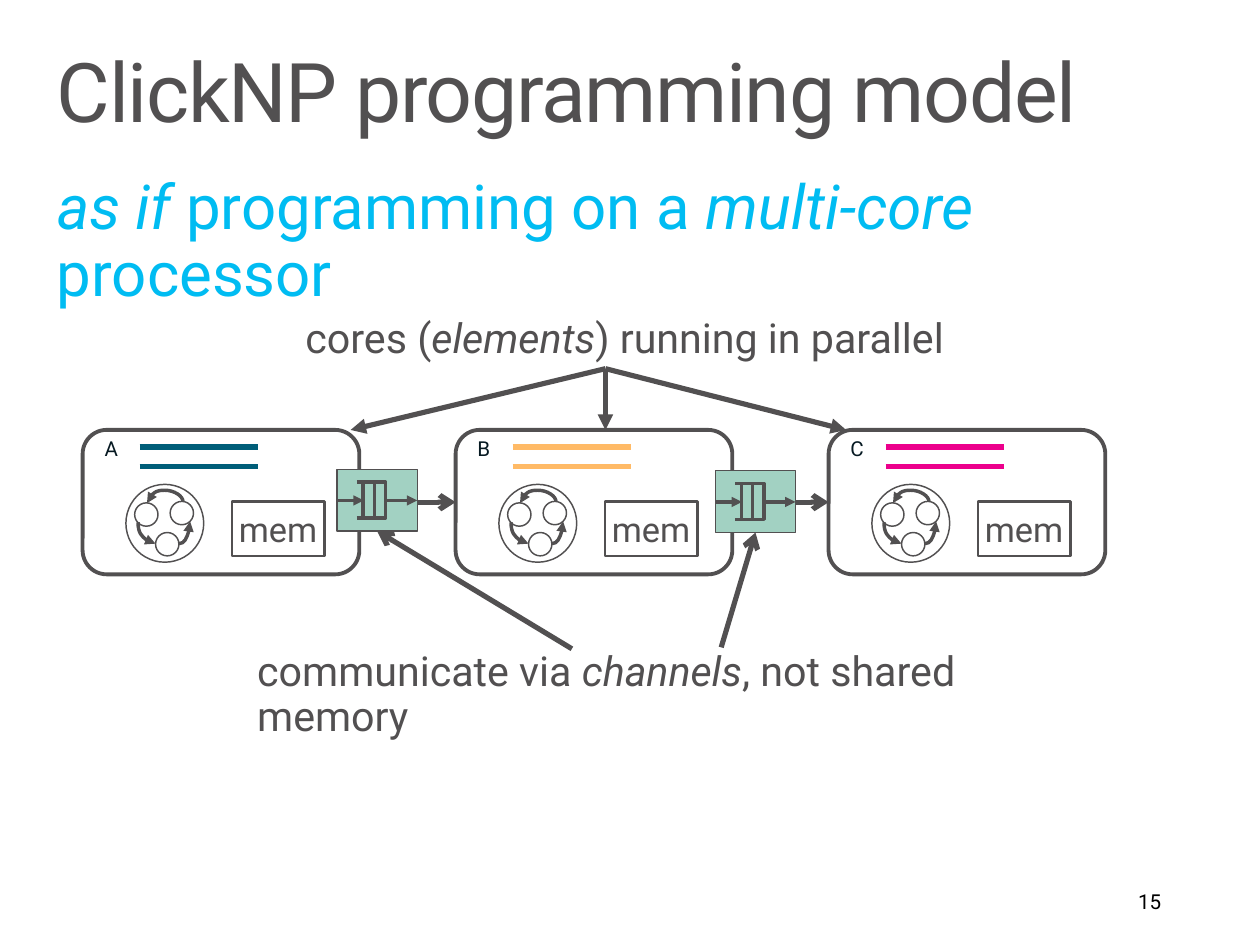
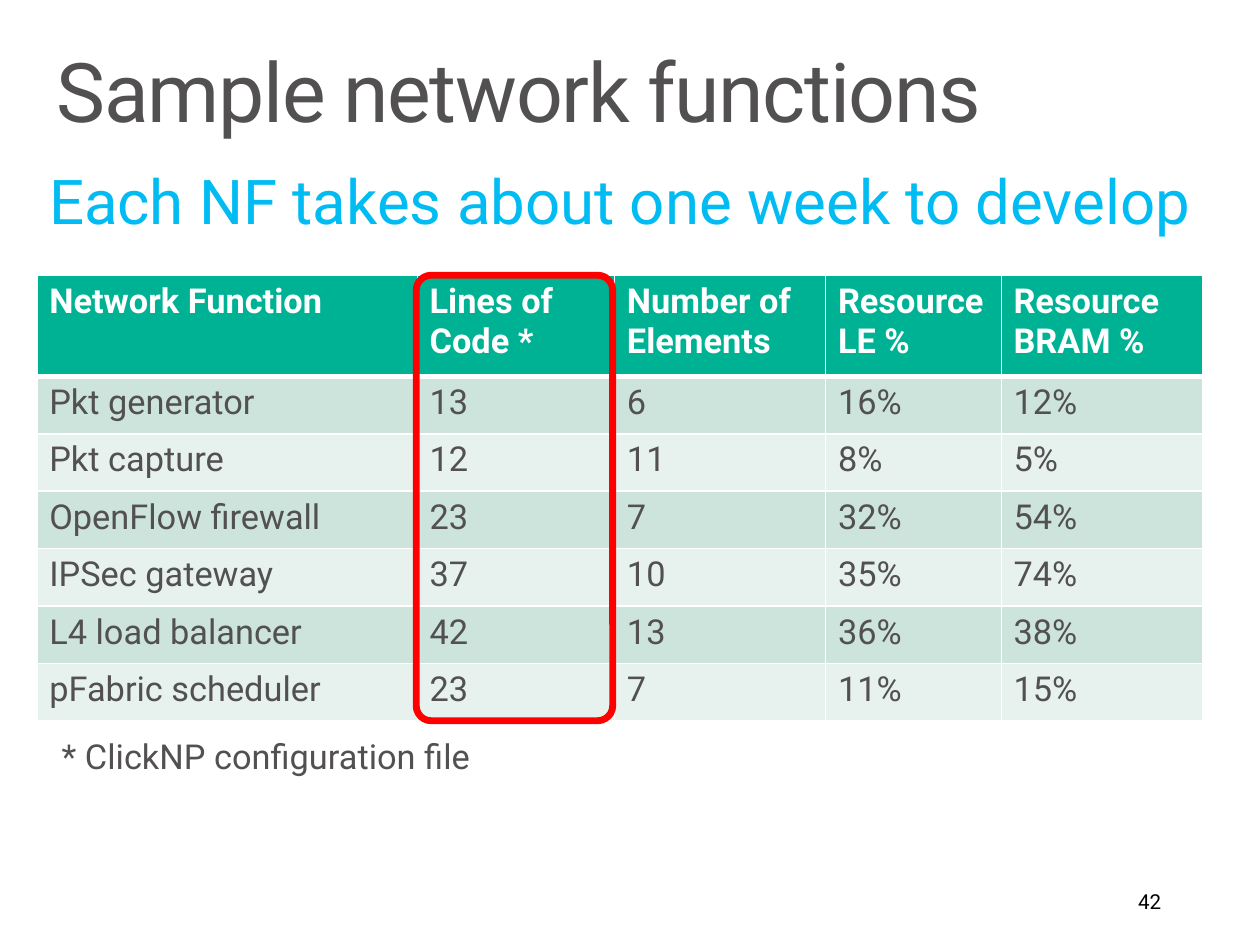
import dataclasses

import lxml.etree
import pptx
import pptx.dml.color
import pptx.enum.shapes
import pptx.enum.text
import pptx.oxml.ns
import pptx.util

Cm = pptx.util.Cm
Pt = pptx.util.Pt
qn = pptx.oxml.ns.qn
SHAPE = pptx.enum.shapes.MSO_SHAPE
CONNECTOR = pptx.enum.shapes.MSO_CONNECTOR
ALIGN = pptx.enum.text.PP_ALIGN
ANCHOR = pptx.enum.text.MSO_ANCHOR


@dataclasses.dataclass(frozen=True)
class Theme:
    font: str = "Roboto"
    gray: str = "525051"
    blue: str = "00BCF2"
    black: str = "000000"
    white: str = "FFFFFF"
    label: str = "061922"
    channel: str = "A2D1C2"
    header: str = "00B294"
    bands: tuple = ("CCE4DC", "E7F2EE")
    highlight: str = "FF0000"
    cores: tuple = (("A", "005E79"), ("B", "FFBA66"), ("C", "EC008C"))
    title_size: int = 48
    subtitle_size: int = 36
    caption_size: int = 24
    body_size: int = 20
    small_size: int = 12


THEME = Theme()
WIDE_INSET = (0.51, 0.41)
HEADING_INSET = (0.41, 0.25)
NARROW_INSET = (0.25, 0.13)

# Core geometry, in cm
CORE_LEFT, CORE_TOP, CORE_PITCH = 1.7, 8.84, 7.67
CORE_WIDTH, CORE_HEIGHT = 5.69, 2.97


def color(value):
    return pptx.dml.color.RGBColor.from_string(value)


def style_paragraph(paragraph, size, text_color, bold=None):
    font = paragraph.font
    font.name, font.size, font.bold = THEME.font, Pt(size), bold
    font.color.rgb = color(text_color)


def set_inset(frame, inset):
    frame.margin_left = frame.margin_right = Cm(inset[0])
    frame.margin_top = frame.margin_bottom = Cm(inset[1])


def add_text(slide, box, text, size, text_color=THEME.gray, inset=NARROW_INSET,
             spacing=None, after=None):
    """Add a wrapped text box; words between underscores are italic."""
    shape = slide.shapes.add_textbox(*map(Cm, box))
    frame = shape.text_frame
    frame.word_wrap = True
    set_inset(frame, inset)
    paragraph = frame.paragraphs[0]
    style_paragraph(paragraph, size, text_color)
    paragraph.line_spacing = spacing
    if after:
        paragraph.space_after = Pt(after)
    for index, part in enumerate(text.split("_")):
        if part:
            run = paragraph.add_run()
            run.text = part
            if index % 2:
                run.font.italic = True
    return shape


def add_caption(slide, box, text, size=THEME.caption_size):
    add_text(slide, box, text, size, inset=WIDE_INSET, spacing=0.9, after=6)


def add_outline(shapes, kind, box, width, fill=None, line=THEME.gray, corner=None):
    shape = shapes.add_shape(kind, *map(Cm, box))
    shape.shadow.inherit = False
    if fill:
        shape.fill.solid()
        shape.fill.fore_color.rgb = color(fill)
    else:
        shape.fill.background()
    shape.line.color.rgb = color(line)
    shape.line.width = Pt(width)
    if corner is not None:
        shape.adjustments[0] = corner
    return shape


def add_line(shapes, start, end, width, line=THEME.gray, head=None, tail=None,
             kind=CONNECTOR.STRAIGHT):
    connector = shapes.add_connector(kind, *map(Cm, (*start, *end)))
    connector.line.color.rgb = color(line)
    connector.line.width = Pt(width)
    properties = connector._element.spPr
    outline = properties.find(qn("a:ln"))
    for tag, arrow in (("a:headEnd", head), ("a:tailEnd", tail)):
        if arrow:
            lxml.etree.SubElement(outline, qn(tag)).set("type", arrow)
    lxml.etree.SubElement(properties, qn("a:effectLst"))
    return connector


def add_curve(shapes, start, end, preset="curvedConnector2", rotation=0, bend=None,
              **arrows):
    connector = add_line(shapes, start, end, 2, kind=CONNECTOR.CURVE, **arrows)
    properties = connector._element.spPr
    geometry = properties.find(qn("a:prstGeom"))
    geometry.set("prst", preset)
    if rotation:
        properties.find(qn("a:xfrm")).set("rot", str(rotation * 60000))
    if bend is not None:
        values = geometry.find(qn("a:avLst"))
        if values is None:
            values = lxml.etree.SubElement(geometry, qn("a:avLst"))
        guide = lxml.etree.SubElement(values, qn("a:gd"))
        guide.set("name", "adj1")
        guide.set("fmla", f"val {round(bend * 100000)}")


def add_base_slide(presentation, title, subtitle, subtitle_inset, number):
    slide = presentation.slides.add_slide(presentation.slide_layouts[6])
    heading = add_text(slide, (0.76, 0.81, 24.4, 2.54), title, THEME.title_size,
                       inset=HEADING_INSET, spacing=0.9)
    for run in heading.text_frame.paragraphs[0].runs:
        run._r.get_or_add_rPr().set("spc", "-80")
    add_text(slide, (0.76, 3.38, 24.4, 3.28), subtitle, THEME.subtitle_size,
             THEME.blue, subtitle_inset, 0.9)
    footer = add_text(slide, (18.29, 18.01, 5.84, 1.04), number, THEME.small_size,
                      THEME.black)
    footer.text_frame.vertical_anchor = ANCHOR.MIDDLE
    footer.text_frame.paragraphs[0].alignment = ALIGN.RIGHT
    return slide


def add_state_machine(slide, x):
    shapes = slide.shapes.add_group_shape().shapes
    add_outline(shapes, SHAPE.OVAL, (x + 0.89, 9.96, 1.6, 1.6), 0.85)
    for left, top in ((1.5, 10.95), (1.07, 10.34), (1.8, 10.31)):
        add_outline(shapes, SHAPE.OVAL, (x + left, top, 0.48, 0.48), 0.85, THEME.white)
    add_curve(shapes, (x + 1.98, 11.18), (x + 2.21, 10.72), tail="triangle")
    add_curve(shapes, (x + 1.5, 11.18), (x + 1.14, 10.74), head="triangle")
    add_curve(shapes, (x + 1.71, 10.7), (x + 1.68, 9.96), "curvedConnector3",
              rotation=270, bend=-7.8, tail="triangle")


def add_memory(slide, x):
    memory = add_outline(slide.shapes, SHAPE.RECTANGLE, (x + 3.07, 10.31, 1.9, 1.12),
                         1.5, THEME.white)
    frame = memory.text_frame
    frame.word_wrap = False
    frame.vertical_anchor = ANCHOR.MIDDLE
    set_inset(frame, (0, 0))
    paragraph = frame.paragraphs[0]
    paragraph.text = "mem"
    paragraph.alignment = ALIGN.CENTER
    style_paragraph(paragraph, THEME.body_size, THEME.gray)


def add_core(slide, x, name, bar_color):
    core = add_outline(slide.shapes, SHAPE.ROUNDED_RECTANGLE,
                       (x, CORE_TOP, CORE_WIDTH, CORE_HEIGHT), 2.25, THEME.white,
                       corner=0.167)
    add_text(slide, (x + 0.2, CORE_TOP, 4.24, 0.76), name, THEME.small_size, THEME.label)
    add_state_machine(slide, x)
    for y in (9.19, 9.6):
        add_line(slide.shapes, (x + 1.17, y), (x + 3.61, y), 3, bar_color)
    add_memory(slide, x)
    return core


def add_channel(slide, x, y):
    shapes = slide.shapes.add_group_shape().shapes
    body = add_outline(shapes, SHAPE.RECTANGLE, (x, y, 1.65, 1.27), 0.75, THEME.channel)
    for start, end in ((0, 0.55), (1, 1.65)):
        add_line(shapes, (x + start, y + 0.64), (x + end, y + 0.64), 2, tail="triangle")
    # Queue slots with an open left end
    for left in (0.54, 0.77):
        add_outline(shapes, SHAPE.RECTANGLE, (x + left, y + 0.26, 0.23, 0.74), 2)
    for level in (0.26, 1):
        add_line(shapes, (x + 0.41, y + level), (x + 0.81, y + level), 2)
    return body


def build_model_slide(presentation):
    slide = add_base_slide(presentation, "ClickNP programming model",
                           "_as if_ programming on a _multi-core_ processor",
                           HEADING_INSET, "15")
    # Cores and the links between them
    cores = [add_core(slide, CORE_LEFT + index * CORE_PITCH, *core)
             for index, core in enumerate(THEME.cores)]
    middle = CORE_TOP + CORE_HEIGHT / 2
    for source, target in zip(cores, cores[1:]):
        link = add_line(slide.shapes, (0, middle), (1, middle), 3, tail="arrow")
        link.begin_connect(source, 3)
        link.end_connect(target, 1)
    # Channels and the arrows that point at them
    for place, start in (((6.93, 9.65), (11.76, 13.34)), ((14.71, 9.68), (14.83, 13.31))):
        channel = add_channel(slide, *place)
        pointer = add_line(slide.shapes, start, place, 3, tail="arrow")
        pointer.end_connect(channel, 2)
    # Captions
    add_caption(slide, (5.77, 6.12, 14.4, 1.75), "cores (_elements_) running in parallel")
    add_caption(slide, (4.78, 12.98, 18.5, 2.6),
                "communicate via _channels_, not shared memory")
    for x in (7.21, 12.45, 17.4):
        add_line(slide.shapes, (12.45, 7.58), (x, CORE_TOP), 3, tail="triangle")


def set_borders(cell, top, bottom):
    properties = cell._tc.get_or_add_tcPr()
    sides = (("a:lnL", 1), ("a:lnR", 1), ("a:lnT", top), ("a:lnB", bottom))
    for index, (tag, width) in enumerate(sides):
        border = lxml.etree.Element(qn(tag))
        border.set("w", str(Pt(width)))
        fill = lxml.etree.SubElement(border, qn("a:solidFill"))
        lxml.etree.SubElement(fill, qn("a:srgbClr")).set("val", THEME.white)
        properties.insert(index, border)


def add_data_table(slide, left, top, widths, heights, rows):
    table = slide.shapes.add_table(len(rows), len(widths), Cm(left), Cm(top),
                                   Cm(sum(widths)), Cm(sum(heights))).table
    table.horz_banding = False
    for column, width in zip(table.columns, widths):
        column.width = Cm(width)
    for index, (row, height, values) in enumerate(zip(table.rows, heights, rows)):
        row.height = Cm(height)
        is_header = index == 0
        for cell, value in zip(row.cells, values):
            cell.text = value
            for paragraph in cell.text_frame.paragraphs:
                style_paragraph(paragraph, THEME.body_size,
                                THEME.white if is_header else THEME.gray, is_header)
            cell.fill.solid()
            cell.fill.fore_color.rgb = color(
                THEME.header if is_header else THEME.bands[(index - 1) % 2])
            set_borders(cell, 3 if index == 1 else 1, 3 if is_header else 1)


def build_functions_slide(presentation):
    slide = add_base_slide(presentation, "Sample network functions",
                           "Each NF takes about one week to develop",
                           NARROW_INSET, "42")
    rows = (
        ("Network Function", "Lines of Code *", "Number of Elements",
         "Resource\nLE %", "Resource\nBRAM %"),
        ("Pkt generator", "13", "6", "16%", "12%"),
        ("Pkt capture", "12", "11", "8%", "5%"),
        ("OpenFlow firewall", "23", "7", "32%", "54%"),
        ("IPSec gateway", "37", "10", "35%", "74%"),
        ("L4 load balancer", "42", "13", "36%", "38%"),
        ("pFabric scheduler", "23", "7", "11%", "15%"),
    )
    heights = [2.08] + [1.18] * (len(rows) - 1)
    add_data_table(slide, 0.76, 5.66, (7.82, 4.06, 4.34, 3.61, 4.14), heights, rows)
    add_caption(slide, (0.76, 14.83, 9.5, 1.6), "* ClickNP configuration file",
                THEME.body_size)
    # Frame around the lines-of-code column
    add_outline(slide.shapes, SHAPE.ROUNDED_RECTANGLE, (8.56, 5.66, 4.04, sum(heights)),
                4, line=THEME.highlight, corner=0.076)


def main():
    presentation = pptx.Presentation()
    presentation.slide_width = Cm(25.91)
    presentation.slide_height = Cm(19.43)
    build_model_slide(presentation)
    build_functions_slide(presentation)
    presentation.save("out.pptx")


if __name__ == "__main__":
    main()
